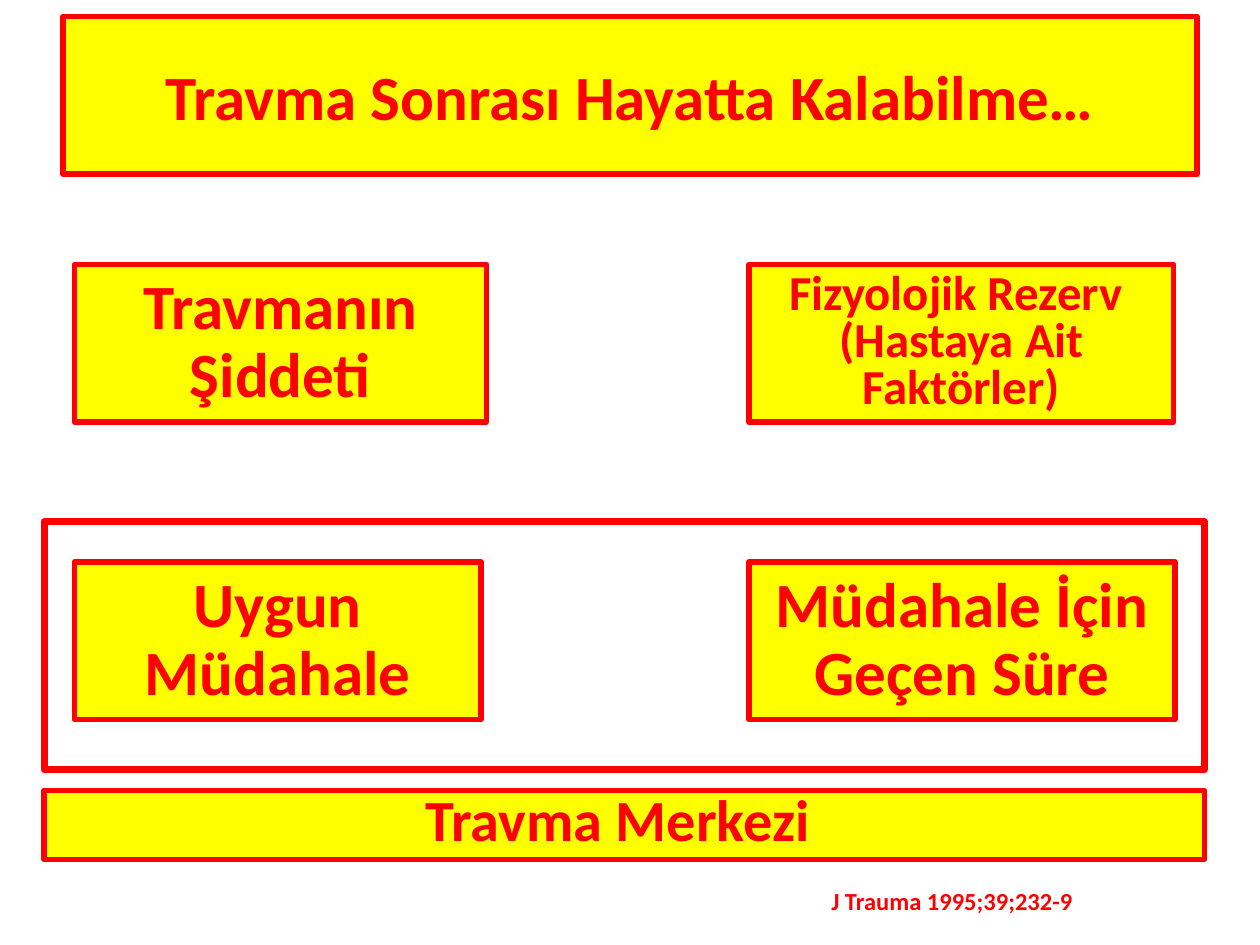
"""Build a slide on the factors behind survival after trauma."""
import pptx
import pptx.util
import pptx.dml.color
import pptx.enum.shapes
import pptx.enum.text
import pptx.oxml.ns
import lxml.etree

Cm, Pt = pptx.util.Cm, pptx.util.Pt
RED, YELLOW = "FF0000", "FFFF00"
CENTER = pptx.enum.text.PP_ALIGN.CENTER


def color(value):
    return pptx.dml.color.RGBColor.from_string(value)


def write(text_frame, lines, size, paragraph_format):
    text_frame.text = "\n".join(lines)
    font_format = {"name": "Calibri", "size": Pt(size), "bold": True}
    for paragraph in text_frame.paragraphs:
        for name, value in paragraph_format.items():
            setattr(paragraph, name, value)
        for run in paragraph.runs:
            for name, value in font_format.items():
                setattr(run.font, name, value)
            run.font.color.rgb = color(RED)


presentation = pptx.Presentation()
presentation.slide_width, presentation.slide_height = Cm(25.4), Cm(19.05)
slide = presentation.slides.add_slide(presentation.slide_layouts[6])

left, right = 1.5, 15.1
upper, lower, box_height = 5.33, 11.33, 3.18
frame_left, frame_width = 0.89, 23.39

boxes = [
    (1.27, 0.33, 22.86, box_height, ["Travma Sonrası Hayatta Kalabilme…"], 36, 1.0),
    (left, lower, 8.2, box_height, ["Uygun Müdahale"], 36, 0.9),
    (right, lower, 8.59, box_height, ["Müdahale İçin Geçen Süre"], 36, 0.9),
    (right, upper, 8.56, box_height,
     ["Fizyolojik Rezerv ", "(Hastaya Ait Faktörler)"], 27.9, 0.8),
    (left, upper, 8.31, box_height, ["Travmanın Şiddeti"], 36, 0.9),
    (frame_left, 10.52, frame_width, 5.0, [], None, None),
    (frame_left, 15.93, frame_width, 1.4, ["Travma Merkezi "], 33.3, 0.8),
]

for x, y, width, height, lines, size, spacing in boxes:
    shape = slide.shapes.add_shape(
        pptx.enum.shapes.MSO_SHAPE.RECTANGLE, Cm(x), Cm(y), Cm(width), Cm(height))
    shape.shadow.inherit = False
    shape.line.color.rgb = color(RED)
    shape.line.width = Pt(3 if lines else 4)
    lxml.etree.SubElement(shape.line._get_or_add_ln(), pptx.oxml.ns.qn("a:round"))
    if not lines:
        shape.fill.background()
        continue
    shape.fill.solid()
    shape.fill.fore_color.rgb = color(YELLOW)
    frame_format = {
        "word_wrap": True,
        "vertical_anchor": pptx.enum.text.MSO_ANCHOR.MIDDLE,
    }
    for name, value in frame_format.items():
        setattr(shape.text_frame, name, value)
    write(shape.text_frame, lines, size, {"alignment": CENTER, "line_spacing": spacing})

citation = slide.shapes.add_textbox(Cm(16.51), Cm(17.73), Cm(5.41), Cm(0.86))
citation_format = {
    "word_wrap": False,
    "auto_size": pptx.enum.text.MSO_AUTO_SIZE.SHAPE_TO_FIT_TEXT,
}
for name, value in citation_format.items():
    setattr(citation.text_frame, name, value)
write(citation.text_frame, ["J Trauma 1995;39;232-9"], 14, {})

presentation.save("out.pptx")
